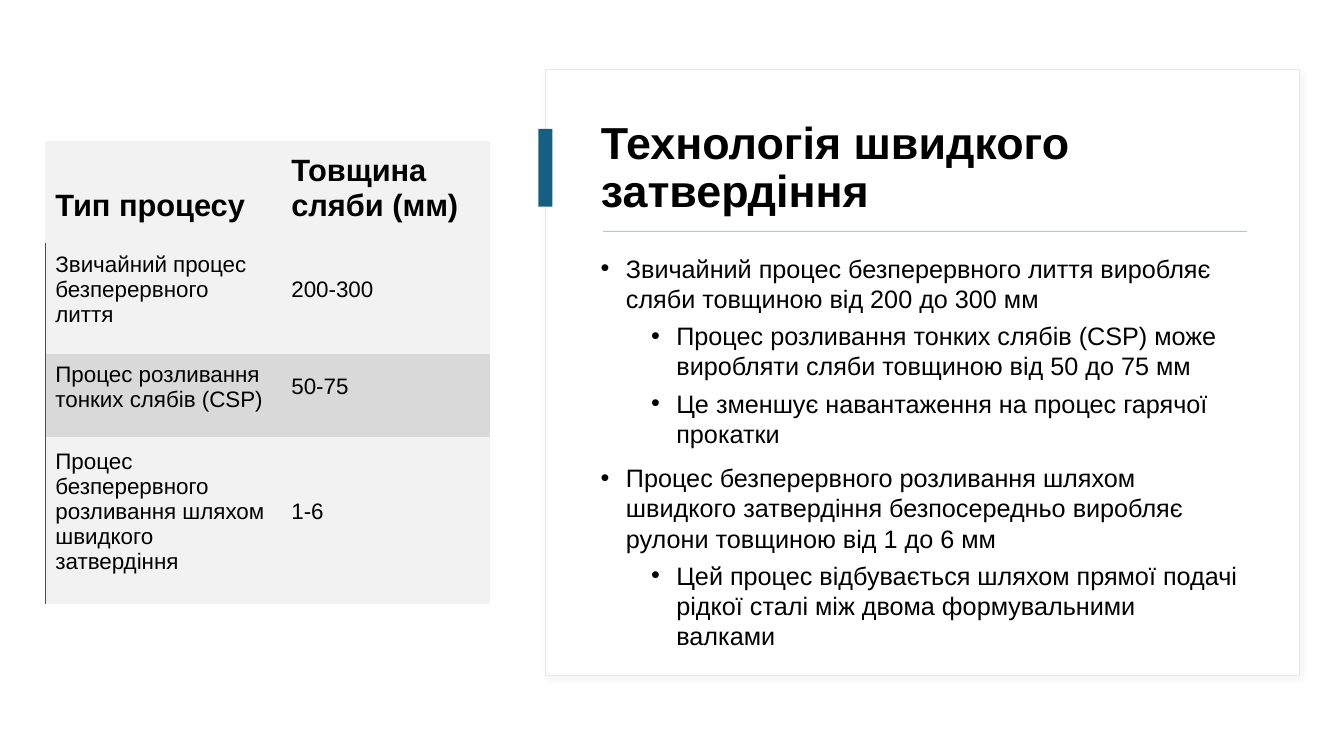
import pptx
import pptx.util
import pptx.dml.color
import pptx.enum.shapes
import pptx.enum.text
import pptx.oxml
import pptx.oxml.ns

EMU_PER_PX = 9144
FONT = "Arial"
BLACK, WHITE, TEAL = "000000", "FFFFFF", "156082"
PALE_BLUE, SKY = "DCEAF7", "A6CAEC"
LIGHT_GREY, MID_GREY = "F2F2F2", "D9D9D9"
NO_TABLE_STYLE = "{2D5ABB26-0587-4C30-8999-92F81FD0307C}"

TITLE = "Технологія швидкого затвердіння"
POINTS = [
    (0, "Звичайний процес безперервного лиття виробляє сляби товщиною від 200 до 300 мм"),
    (1, "Процес розливання тонких слябів (CSP) може виробляти сляби товщиною від 50 до 75 мм"),
    (1, "Це зменшує навантаження на процес гарячої прокатки"),
    (0, "Процес безперервного розливання шляхом швидкого затвердіння безпосередньо виробляє рулони товщиною від 1 до 6 мм"),
    (1, "Цей процес відбувається шляхом прямої подачі рідкої сталі між двома формувальними валками"),
]
COLUMN_WIDTHS = [234, 207]
SLAB_ROWS = [
    (101, LIGHT_GREY, ["Тип процесу", "Товщина сляби (мм)"]),
    (110, LIGHT_GREY, ["Звичайний процес безперервного лиття", "200-300"]),
    (83, MID_GREY, ["Процес розливання тонких слябів (CSP)", "50-75"]),
    (165, LIGHT_GREY, ["Процес безперервного розливання шляхом швидкого затвердіння", "1-6"]),
]


def px(length):
    return pptx.util.Emu(length * EMU_PER_PX)


def color(value):
    return pptx.dml.color.RGBColor.from_string(value)


def xml(tag, attributes, content=""):
    namespace = pptx.oxml.ns.nsdecls("a")
    return pptx.oxml.parse_xml(f"<a:{tag} {namespace} {attributes}>{content}</a:{tag}>")


def style_text(paragraph, size, bold=False):
    for span in paragraph.runs:
        span.font.name = FONT
        span.font.size = pptx.util.Pt(size)
        span.font.bold = bold
        span.font.color.rgb = color(BLACK)


def add_rectangle(page, left, top, width, height, fill):
    shape = page.shapes.add_shape(
        pptx.enum.shapes.MSO_SHAPE.RECTANGLE, px(left), px(top), px(width), px(height))
    shape.shadow.inherit = False
    shape.fill.solid()
    shape.fill.fore_color.rgb = color(fill)
    shape.line.fill.background()
    return shape


def add_panel(page, left, top, width, height):
    panel = add_rectangle(page, left, top, width, height, WHITE)
    panel.line.color.rgb = color(PALE_BLUE)
    panel.line.width = pptx.util.Pt(0.75)
    effects = panel._element.spPr.find(pptx.oxml.ns.qn("a:effectLst"))
    effects.append(xml(
        "outerShdw", 'blurRad="50800" dist="38100" dir="2700000" algn="tl" rotWithShape="0"',
        f'<a:srgbClr val="{MID_GREY}"><a:alpha val="30000"/></a:srgbClr>'))
    add_rectangle(page, left - 7, top + 59, 14, 77, TEAL)
    add_rectangle(page, left + 57, top + 160, 639, 1, SKY)
    place_title(page, left + 45, top + 38, 655, 121)
    add_points(page, left + 45, top + 177, 655, 389)


def place_title(page, left, top, width, height):
    title = page.shapes.title
    title.left, title.top, title.width, title.height = map(px, (left, top, width, height))
    page.shapes._spTree.append(title._element)
    box = title.text_frame
    box.text = TITLE
    box.word_wrap = True
    box.auto_size = pptx.enum.text.MSO_AUTO_SIZE.NONE
    box.vertical_anchor = pptx.enum.text.MSO_ANCHOR.MIDDLE
    para = box.paragraphs[0]
    para.alignment = pptx.enum.text.PP_ALIGN.LEFT
    para.line_spacing = 0.9
    style_text(para, 32, True)


def add_points(page, left, top, width, height):
    box = page.shapes.add_textbox(px(left), px(top), px(width), px(height)).text_frame
    box.word_wrap = True
    for index, (level, text) in enumerate(POINTS):
        para = box.paragraphs[0] if index == 0 else box.add_paragraph()
        para.text = text
        para.level = level
        if index:
            para.space_before = pptx.util.Pt(5 if level else 10)
        properties = para._p.get_or_add_pPr()
        properties.set("marL", str(px(25 + 50 * level)))
        properties.set("indent", str(px(-25)))
        properties.append(xml("buFont", f'typeface="{FONT}"'))
        properties.append(xml("buChar", 'char="•"'))
        style_text(para, 18)


def add_slab_table(page, left, top):
    heights = [height for height, fill, texts in SLAB_ROWS]
    table = page.shapes.add_table(
        len(SLAB_ROWS), len(COLUMN_WIDTHS), px(left), px(top),
        px(sum(COLUMN_WIDTHS)), px(sum(heights))).table
    table.horz_banding = False
    table.first_row = False
    table._tbl.tblPr.find(pptx.oxml.ns.qn("a:tableStyleId")).text = NO_TABLE_STYLE
    for column, width in zip(table.columns, COLUMN_WIDTHS):
        column.width = px(width)
    for row_index, (height, fill, texts) in enumerate(SLAB_ROWS):
        table.rows[row_index].height = px(height)
        for column_index, text in enumerate(texts):
            cell = table.cell(row_index, column_index)
            fill_cell(cell, text, fill, header=row_index == 0)
            if row_index and column_index == 0:
                cell._tc.get_or_add_tcPr().insert(0, xml(
                    "lnL", 'w="12700"',
                    f'<a:solidFill><a:srgbClr val="{TEAL}"/></a:solidFill>'))


def fill_cell(cell, text, fill, header):
    anchors = pptx.enum.text.MSO_ANCHOR
    cell.text_frame.text = text
    cell.vertical_anchor = anchors.BOTTOM if header else anchors.MIDDLE
    cell.margin_left, cell.margin_top = px(10), px(3)
    cell.margin_right, cell.margin_bottom = px(14), px(20)
    cell.fill.solid()
    cell.fill.fore_color.rgb = color(fill)
    style_text(cell.text_frame.paragraphs[0], 22 if header else 16, header)


def main():
    deck = pptx.Presentation()
    deck.slide_width, deck.slide_height = px(1333), px(750)
    page = deck.slides.add_slide(deck.slide_layouts.get_by_name("Title Only"))
    add_panel(page, 541, 69, 748, 601)
    add_slab_table(page, 45, 140)
    deck.save("out.pptx")


if __name__ == "__main__":
    main()
